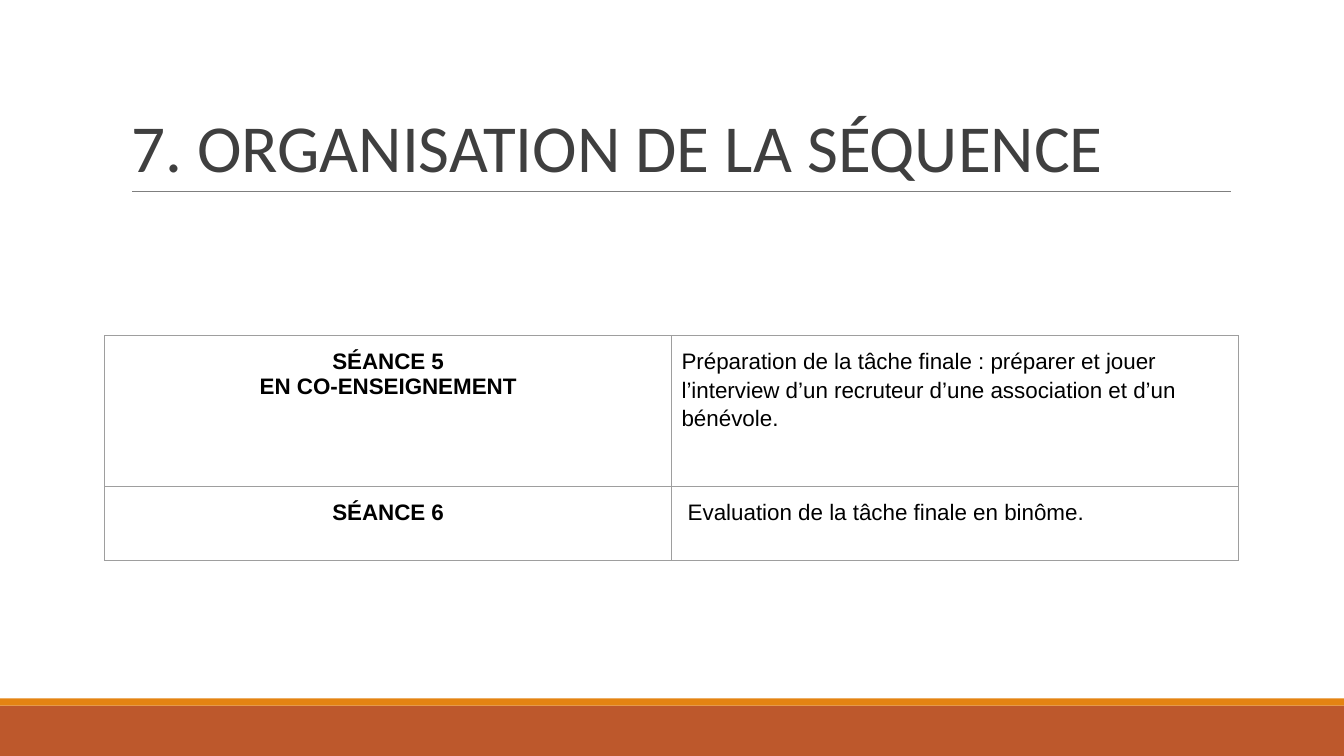
from pptx import Presentation
from pptx.dml.color import RGBColor
from pptx.enum import shapes, text
from pptx.oxml import parse_xml
from pptx.oxml.ns import nsdecls
from pptx.util import Inches, Pt

# Content: each paragraph is (text, line spacing, space before)
TITLE = "7. ORGANISATION DE LA SÉQUENCE"
ROWS = [
    ([("SÉANCE 5", 1.15, 12), ("EN CO-ENSEIGNEMENT", 1, 0)],
     [("Préparation de la tâche finale : préparer et jouer l’interview "
       "d’un recruteur d’une association et d’un bénévole.", 1.15, 12)]),
    ([("SÉANCE 6", 1.15, 12)],
     [(" Evaluation de la tâche finale en binôme.", 1.15, 12)]),
]
HEIGHTS = [1.5, 0.73]
COLS = [5.62, 5.62]
BANDS = [("rust", 7, 0.5), ("orange", 6.93, 0.07)]
COLORS = {"rust": "BD582C", "orange": "E48312", "rule": "7F7F7F",
          "title": "3F3F3F", "text": "000000", "grid": "9E9E9E"}


def rgb(name):
    return RGBColor.from_string(COLORS[name])


def write(par, words, size=16, font="Arial", color="text", bold=False,
          align=text.PP_ALIGN.LEFT, line=1.0, before=0):
    run = par.add_run()
    run.text = words
    run.font.size, run.font.name, run.font.bold = Pt(size), font, bold
    run.font.color.rgb = rgb(color)
    par.alignment, par.line_spacing = align, line
    par.space_before = Pt(before)


def frame(cell):
    props = cell._tc.get_or_add_tcPr()
    for spot, side in enumerate("LRTB"):
        props.insert(spot, parse_xml(
            f'<a:ln{side} {nsdecls("a")} w="9525"><a:solidFill>'
            f'<a:srgbClr val="{COLORS["grid"]}"/></a:solidFill></a:ln{side}>'))


deck = Presentation()
deck.slide_width, deck.slide_height = Inches(13.33), Inches(7.5)
slide = deck.slides.add_slide(deck.slide_layouts[5])

# Bands at the foot
for name, top, high in BANDS:
    band = slide.shapes.add_shape(shapes.MSO_SHAPE.RECTANGLE, 0, Inches(top),
                                  deck.slide_width, Inches(high))
    band.shadow.inherit = False
    band.fill.solid()
    band.fill.fore_color.rgb = rgb(name)
    band.line.fill.background()

# Rule under the title
rule = slide.shapes.add_connector(shapes.MSO_CONNECTOR.STRAIGHT, Inches(1.31),
                                  Inches(1.9), Inches(12.21), Inches(1.9))
rule.line.color.rgb = rgb("rule")
rule.line.width = Pt(0.75)
rule._element.spPr.append(parse_xml(f'<a:effectLst {nsdecls("a")}/>'))

# Title
head = slide.shapes.title
head.left, head.top = Inches(1.2), Inches(0.31)
head.width, head.height = Inches(11), Inches(1.59)
body = head.text_frame
body.auto_size = text.MSO_AUTO_SIZE.NONE
body.word_wrap = True
body.vertical_anchor = text.MSO_ANCHOR.BOTTOM
write(body.paragraphs[0], TITLE, size=48, font="Calibri", color="title",
      line=0.85)

# Table of sessions
table = slide.shapes.add_table(
    len(ROWS), len(COLS), Inches(1.04), Inches(3.33),
    Inches(sum(COLS)), Inches(sum(HEIGHTS))).table
table.first_row = table.horz_banding = False
for col, wide in zip(table.columns, COLS):
    col.width = Inches(wide)
for r, (row, high) in enumerate(zip(ROWS, HEIGHTS)):
    table.rows[r].height = Inches(high)
    for c, pars in enumerate(row):
        cell = table.cell(r, c)
        cell.fill.background()
        frame(cell)
        cell.margin_left = cell.margin_right = Inches(0.1)
        cell.margin_top = cell.margin_bottom = Inches(0.1)
        label = c == 0
        align = text.PP_ALIGN.CENTER if label else text.PP_ALIGN.LEFT
        for i, (words, line, before) in enumerate(pars):
            par = (cell.text_frame.add_paragraph() if i
                   else cell.text_frame.paragraphs[0])
            write(par, words, bold=label, align=align, line=line,
                  before=before)

deck.save("out.pptx")
